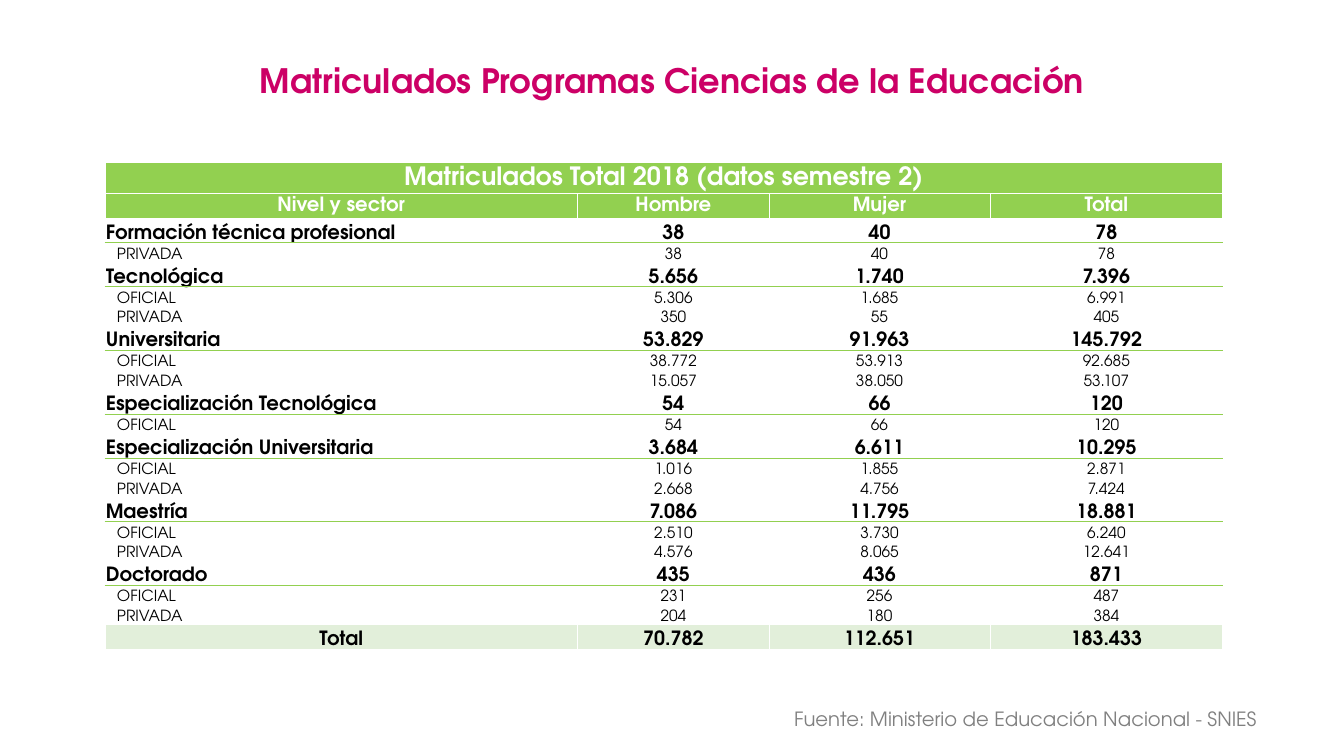
"""Build the slide on enrolment in education programmes, by level and sector."""
from dataclasses import dataclass

from lxml import etree
from pptx import Presentation
from pptx import util as u
from pptx.dml.color import RGBColor
from pptx.enum import text as t
from pptx.oxml import ns

FONT = "TeX Gyre Adventor"
HUES = {"pink": "CC0066", "green": "92D050", "pale": "E2EFDA",
        "white": "FFFFFF", "black": "000000", "gray": "808080"}
WIDE, HIGH = u.Inches(13.333), u.Inches(7.5)
LEFT, MID, RIGHT = t.PP_ALIGN.LEFT, t.PP_ALIGN.CENTER, t.PP_ALIGN.RIGHT
COLS = (35.18, 14.25, 16.43, 17.33)


@dataclass(frozen=True)
class Box:
    """Place and size in percent of the slide."""
    left: float
    top: float
    width: float
    height: float

    def frame(self) -> tuple[int, int, int, int]:
        return across(self.left), down(self.top), across(self.width), down(self.height)


@dataclass(frozen=True)
class Style:
    """Look of one kind of table row; height in percent of the slide."""
    size: int
    height: float
    bold: bool = True
    hue: str = "black"
    fill: str | None = None
    align: t.PP_ALIGN = MID
    anchor: t.MSO_ANCHOR = t.MSO_ANCHOR.BOTTOM
    indent: float = 0.01
    top: str = "white"
    base: str = "white"


@dataclass(frozen=True)
class Line:
    """One table row: its style and its cell texts."""
    style: Style
    cells: tuple[str, ...]


HEAD = Style(18, 4, hue="white", fill="green", anchor=t.MSO_ANCHOR.MIDDLE)
NAMES = Style(14, 3.2, hue="white", fill="green", anchor=t.MSO_ANCHOR.MIDDLE)
LEVEL = Style(14, 3.2, align=LEFT, base="green")
FIRST = Style(11, 2.53, bold=False, align=LEFT, indent=0.12, top="green")
NEXT = Style(11, 2.53, bold=False, align=LEFT, indent=0.12)
TOTAL = Style(14, 3.2, fill="pale")

LINES = (
    Line(HEAD, ("Matriculados Total 2018 (datos semestre 2)",)),
    Line(NAMES, ("Nivel y sector", "Hombre", "Mujer", "Total")),
    Line(LEVEL, ("Formación técnica profesional", "38", "40", "78")),
    Line(FIRST, ("PRIVADA", "38", "40", "78")),
    Line(LEVEL, ("Tecnológica", "5.656", "1.740", "7.396")),
    Line(FIRST, ("OFICIAL", "5.306", "1.685", "6.991")),
    Line(NEXT, ("PRIVADA", "350", "55", "405")),
    Line(LEVEL, ("Universitaria", "53.829", "91.963", "145.792")),
    Line(FIRST, ("OFICIAL", "38.772", "53.913", "92.685")),
    Line(NEXT, ("PRIVADA", "15.057", "38.050", "53.107")),
    Line(LEVEL, ("Especialización Tecnológica", "54", "66", "120")),
    Line(FIRST, ("OFICIAL", "54", "66", "120")),
    Line(LEVEL, ("Especialización Universitaria", "3.684", "6.611", "10.295")),
    Line(FIRST, ("OFICIAL", "1.016", "1.855", "2.871")),
    Line(NEXT, ("PRIVADA", "2.668", "4.756", "7.424")),
    Line(LEVEL, ("Maestría", "7.086", "11.795", "18.881")),
    Line(FIRST, ("OFICIAL", "2.510", "3.730", "6.240")),
    Line(NEXT, ("PRIVADA", "4.576", "8.065", "12.641")),
    Line(LEVEL, ("Doctorado", "435", "436", "871")),
    Line(FIRST, ("OFICIAL", "231", "256", "487")),
    Line(NEXT, ("PRIVADA", "204", "180", "384")),
    Line(TOTAL, ("Total", "70.782", "112.651", "183.433")),
)


def across(share: float) -> int:
    return round(WIDE * share / 100)


def down(share: float) -> int:
    return round(HIGH * share / 100)


def write(frame, words: str, *, size: int, hue: str, bold: bool = False,
          align: t.PP_ALIGN = LEFT) -> None:
    para = frame.paragraphs[0]
    para.alignment = align
    run = para.add_run()
    run.text = words
    font = run.font
    font.name, font.size, font.bold = FONT, u.Pt(size), bold
    font.color.rgb = RGBColor.from_string(HUES[hue])


def place(shape, box: Box) -> None:
    shape.left, shape.top, shape.width, shape.height = box.frame()
    shape.text_frame.word_wrap = True
    shape.text_frame.auto_size = t.MSO_AUTO_SIZE.SHAPE_TO_FIT_TEXT
    shape.text_frame.vertical_anchor = t.MSO_ANCHOR.TOP


def edge(cell, style: Style) -> None:
    props = cell._tc.get_or_add_tcPr()
    sides = {"lnL": "white", "lnR": "white", "lnT": style.top, "lnB": style.base}
    for spot, (side, hue) in enumerate(sides.items()):
        rule = etree.Element(ns.qn(f"a:{side}"), w=str(u.Pt(0.5)))
        fill = etree.SubElement(rule, ns.qn("a:solidFill"))
        etree.SubElement(fill, ns.qn("a:srgbClr"), val=HUES[hue])
        props.insert(spot, rule)


def dress(cell, style: Style, first: bool) -> None:
    cell.margin_left = u.Inches(style.indent if first else 0.01)
    cell.margin_right = cell.margin_top = u.Inches(0.01)
    cell.margin_bottom = 0
    cell.vertical_anchor = style.anchor
    if style.fill:
        cell.fill.solid()
        cell.fill.fore_color.rgb = RGBColor.from_string(HUES[style.fill])
    else:
        cell.fill.background()
    edge(cell, style)


def fill_grid(slide, box: Box) -> None:
    grid = slide.shapes.add_table(len(LINES), len(COLS), *box.frame()).table
    grid.first_row = grid.horz_banding = False
    for col, share in zip(grid.columns, COLS):
        col.width = across(share)
    for row, line in zip(grid.rows, LINES):
        style = line.style
        row.height = down(style.height)
        for pos, cell in enumerate(row.cells):
            dress(cell, style, pos == 0)
        for pos, (cell, words) in enumerate(zip(row.cells, line.cells)):
            write(cell.text_frame, words, size=style.size, hue=style.hue,
                  bold=style.bold, align=MID if pos else style.align)
    grid.cell(0, 0).merge(grid.cell(0, len(COLS) - 1))


def main() -> None:
    deck = Presentation()
    deck.slide_width, deck.slide_height = WIDE, HIGH
    slide = deck.slides.add_slide(deck.slide_layouts[5])
    title = slide.shapes.title
    place(title, Box(9, 7.2, 81.98, 6.67))
    write(title.text_frame, "Matriculados Programas Ciencias de la Educación",
          size=24, hue="pink", bold=True, align=MID)
    fill_grid(slide, Box(7.8, 21.47, sum(COLS), sum(l.style.height for l in LINES)))
    spot = Box(44.25, 92.8, 50.03, 4.53)
    source = slide.shapes.add_textbox(*spot.frame())
    place(source, spot)
    write(source.text_frame, "Fuente: Ministerio de Educación Nacional - SNIES",
          size=14, hue="gray", align=RIGHT)
    deck.save("out.pptx")


if __name__ == "__main__":
    main()
